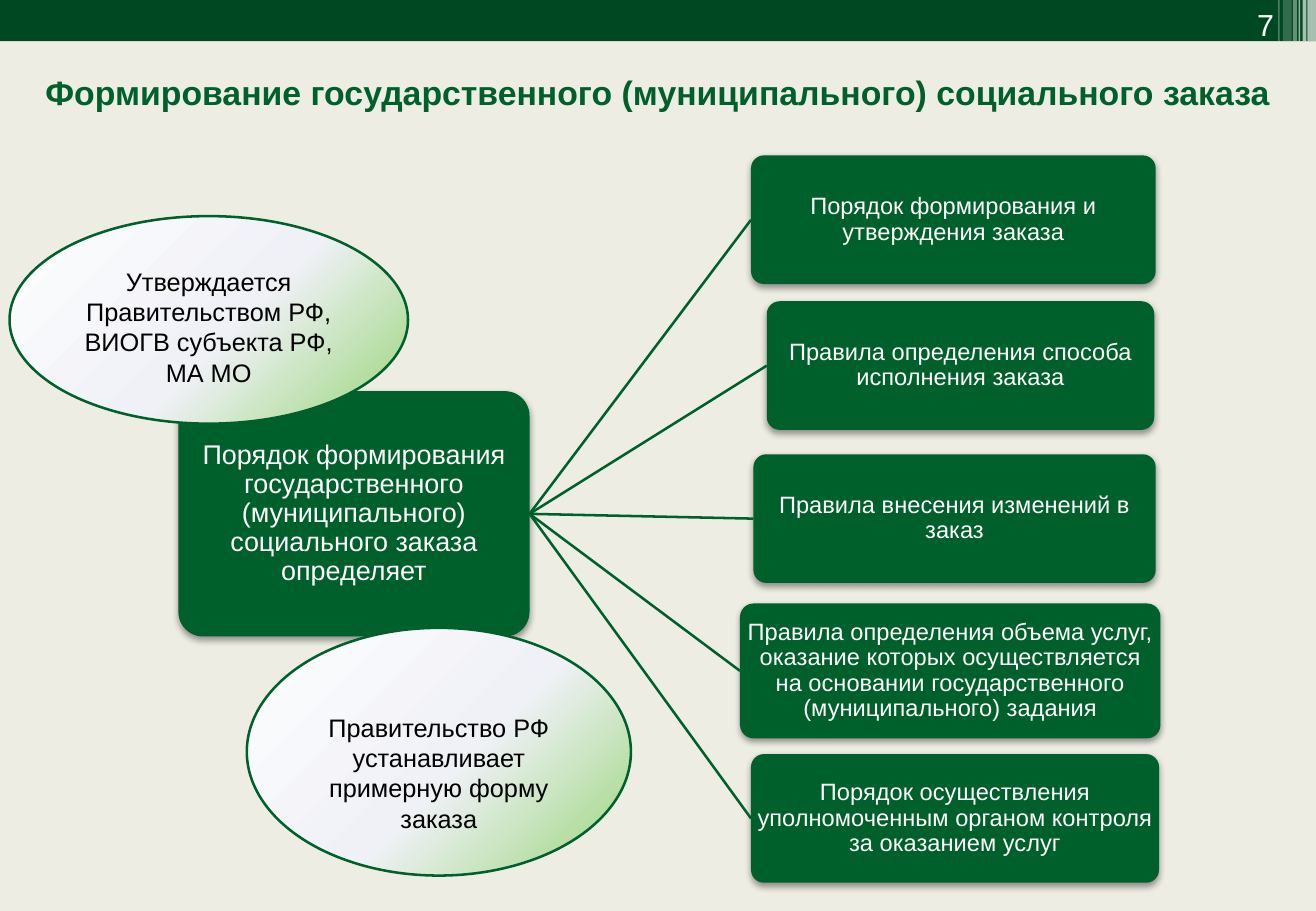
from lxml.etree import SubElement
from pptx import Presentation
from pptx.dml.color import RGBColor
from pptx.enum.shapes import MSO_CONNECTOR, MSO_SHAPE
from pptx.enum.text import MSO_ANCHOR, PP_ALIGN
from pptx.oxml import parse_xml
from pptx.oxml.ns import nsdecls, qn
from pptx.util import Cm, Pt

COLORS = {"paper": "EDEDE3", "band": "004821", "green": "00602B", "white": "FFFFFF",
          "black": "000000", "pearl": "FEFEFE", "mist": "F0F1F7", "lime": "98D579"}
WIDTH, HEIGHT = 27.51, 19.05
STRIPES = [(27.33, 0.18, 65), (27.23, 0.08, 65), (27.15, 0.03, 60),
           (27.03, 0.08, 40), (26.82, 0.18, 20), (26.72, 0.03, 30)]
TITLE = "Формирование государственного (муниципального) социального заказа"
ORDER = ("Порядок формирования государственного\n(муниципального) "
         "социального заказа определяет")
RULES = [
    ("Порядок формирования и утверждения заказа", (15.7, 3.25, 8.46, 2.69)),
    ("Правила определения способа исполнения заказа", (16.03, 6.3, 8.1, 2.69)),
    ("Правила внесения изменений в заказ", (15.75, 9.5, 8.41, 2.69)),
    ("Правила определения объема услуг, оказание которых осуществляется "
     "на основании государственного (муниципального) задания", (15.47, 12.62, 8.79, 2.82)),
    ("Порядок осуществления уполномоченным органом контроля за оказанием услуг",
     (15.7, 15.77, 8.53, 2.69)),
]
NOTES = [
    ("Утверждается Правительством РФ,\nВИОГВ субъекта РФ, МА МО", (0.2, 4.52, 8.33, 4.34)),
    ("Правительство РФ устанавливает примерную форму заказа", (5.16, 13.13, 8.03, 5.18)),
]


def rgb(name):
    """Return the named colour."""
    return RGBColor.from_string(COLORS[name])


def write(sp, text, size, color, anchor=MSO_ANCHOR.MIDDLE, align=PP_ALIGN.CENTER):
    """Fill a shape with one wrapped paragraph and return it."""
    tf = sp.text_frame
    tf.word_wrap = True
    tf.vertical_anchor = anchor
    p = tf.paragraphs[0]
    p.text = text
    p.alignment = align
    p.font.name = "Arial"
    p.font.size = Pt(size)
    p.font.color.rgb = rgb(color)
    return p


def add_shape(s, kind, box, color):
    """Add a plain filled shape without outline or shadow."""
    sp = s.shapes.add_shape(kind, *map(Cm, box))
    sp.shadow.inherit = False
    sp.fill.solid()
    sp.fill.fore_color.rgb = rgb(color)
    sp.line.fill.background()
    return sp


def add_header(s, box):
    """Draw the top band with its stripes and the page number."""
    left, top, width, height = box
    add_shape(s, MSO_SHAPE.RECTANGLE, box, "band")
    for x, w, alpha in STRIPES:
        sp = add_shape(s, MSO_SHAPE.RECTANGLE, (left + x, top, w, height), "white")
        clr = next(sp.fill._xPr.iter(qn("a:srgbClr")))
        SubElement(clr, qn("a:alpha"), val=str(alpha * 1000))
    number = s.shapes.add_textbox(Cm(left + width - 2.92), Cm(top), Cm(2.29), Cm(1.02))
    write(number, "7", 18, "white", MSO_ANCHOR.BOTTOM, PP_ALIGN.RIGHT)


def add_title(s, box):
    """Write the slide title."""
    p = write(s.shapes.add_textbox(*map(Cm, box)), TITLE, 20, "green")
    p.font.bold = True


def add_card(s, box, text, size):
    """Add a green rounded card with a soft shadow."""
    sp = add_shape(s, MSO_SHAPE.ROUNDED_RECTANGLE, box, "green")
    sp.adjustments[0] = 0.1
    effects = sp._element.spPr.find(qn("a:effectLst"))
    shadow = SubElement(effects, qn("a:outerShdw"), blurRad=str(Pt(4.1)),
                        dist=str(Pt(2)), dir="5400000", rotWithShape="0")
    clr = SubElement(shadow, qn("a:srgbClr"), val=COLORS["black"])
    SubElement(clr, qn("a:alpha"), val="40000")
    tf = sp.text_frame
    tf.margin_left = tf.margin_right = tf.margin_top = tf.margin_bottom = Cm(0.02)
    write(sp, text, size, "white").line_spacing = 0.9
    return sp


def add_diagram(s, box):
    """Draw the main card, the rule cards and the lines between them."""
    main = add_card(s, box, ORDER, 16)
    for text, place in RULES:
        rule = add_card(s, place, text, 14)
        line = s.shapes.add_connector(MSO_CONNECTOR.STRAIGHT, 0, 0, 0, 0)
        line.begin_connect(main, 3)
        line.end_connect(rule, 1)
        line.line.color.rgb = rgb("green")
        line.line.width = Pt(1.5)
        SubElement(line._element.spPr, qn("a:effectLst"))


def add_note(s, box, text):
    """Add an outlined ellipse with a radial gradient."""
    sp = add_shape(s, MSO_SHAPE.OVAL, box, "pearl")
    sp.line.color.rgb = rgb("green")
    sp.line.width = Pt(1.5)
    stops = "".join(f'<a:gs pos="{pos}000"><a:srgbClr val="{COLORS[name]}"/></a:gs>'
                    for pos, name in ((0, "pearl"), (55, "mist"), (100, "lime")))
    gradient = parse_xml(
        f'<a:gradFill {nsdecls("a")} rotWithShape="1"><a:gsLst>{stops}</a:gsLst>'
        '<a:path path="circle"><a:fillToRect l="-40000" t="-90000" r="140000" b="190000"/>'
        '</a:path></a:gradFill>')
    spPr = sp._element.spPr
    spPr.replace(spPr.find(qn("a:solidFill")), gradient)
    write(sp, text, 15, "black", MSO_ANCHOR.BOTTOM)


def main():
    """Build and save the slide."""
    prs = Presentation()
    prs.slide_width, prs.slide_height = Cm(WIDTH), Cm(HEIGHT)
    s = prs.slides.add_slide(prs.slide_layouts[6])
    s.background.fill.solid()
    s.background.fill.fore_color.rgb = rgb("paper")
    add_header(s, (0, 0, WIDTH, 0.86))
    add_diagram(s, (3.73, 8.18, 7.34, 5.13))
    for text, box in NOTES:
        add_note(s, box, text)
    add_title(s, (0, 0.94, WIDTH, 1.96))
    prs.save("out.pptx")


if __name__ == "__main__":
    main()
